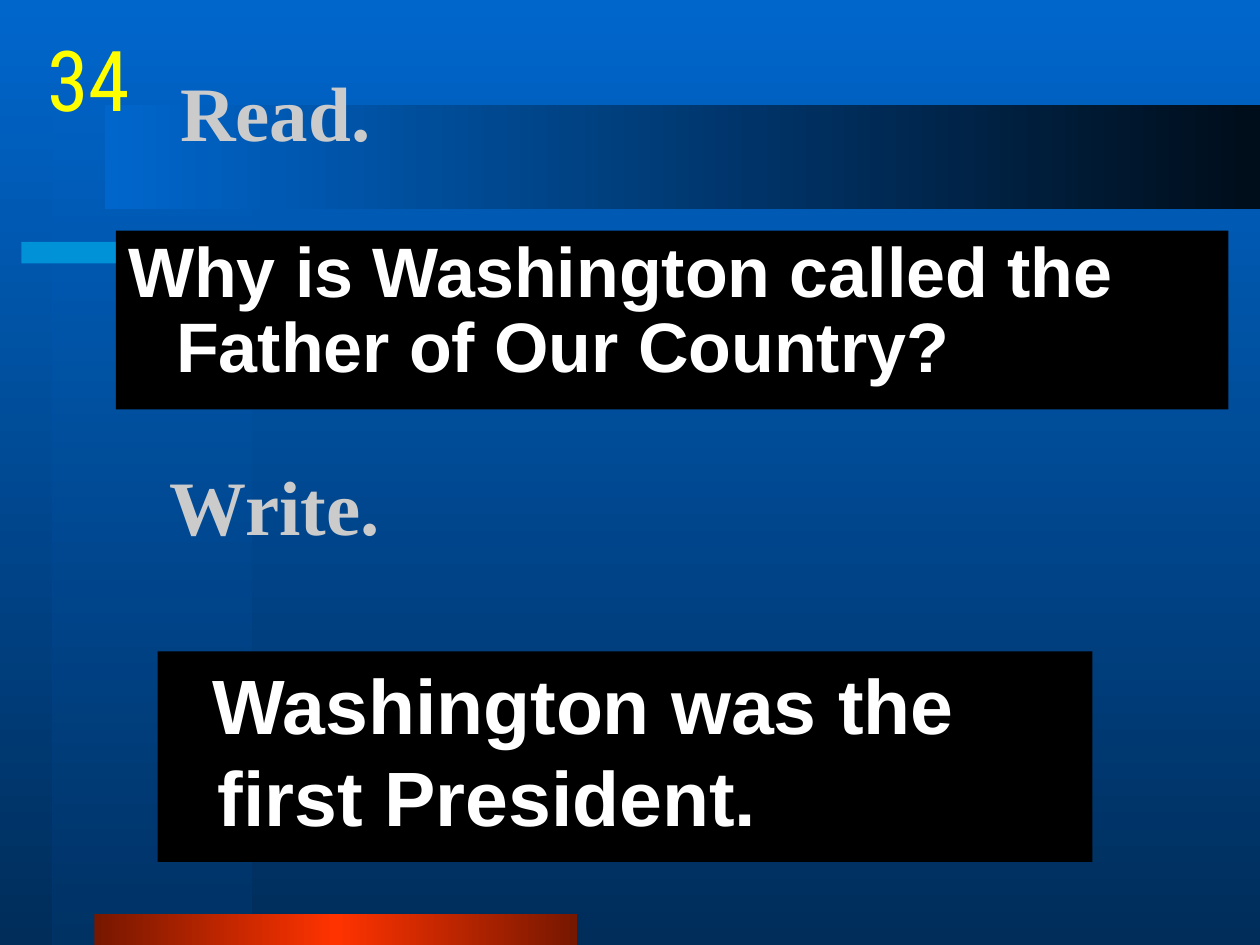
from dataclasses import dataclass
from typing import Optional

import lxml.etree
import pptx
import pptx.dml.color
import pptx.enum.shapes
import pptx.enum.text
import pptx.oxml.ns
import pptx.util

Inches = pptx.util.Inches
Pt = pptx.util.Pt
qn = pptx.oxml.ns.qn


@dataclass(frozen=True)
class Theme:
    blue: str = "0066CC"
    navy: str = "002D5A"
    column_end: str = "00376E"
    midnight: str = "000D1A"
    cyan: str = "00CCFF"
    red: str = "FF3300"
    dark_red: str = "761700"
    black: str = "000000"
    white: str = "FFFFFF"
    silver: str = "CBCBCB"
    yellow: str = "FFFF00"
    serif: str = "Times New Roman"
    sans: str = "Arial"
    condensed: str = "Roboto Condensed"
    question_size: int = 40
    heading_size: int = 44
    number_size: int = 48


THEME = Theme()


@dataclass(frozen=True)
class Box:
    left: float
    top: float
    width: float
    height: float

    def lengths(self) -> tuple:
        return tuple(Inches(v) for v in (self.left, self.top, self.width, self.height))


@dataclass(frozen=True)
class Decoration:
    box: Box
    colors: tuple
    angle: int = 0
    opacity: int = 100


@dataclass(frozen=True)
class TextStyle:
    font: str
    size: int
    color: str
    bold: bool = True


@dataclass(frozen=True)
class Panel:
    box: Box
    text: str
    size: int
    first_indent: float
    line_spacing: Optional[float] = None


def rgb(color: str) -> pptx.dml.color.RGBColor:
    return pptx.dml.color.RGBColor.from_string(color)


def apply_gradient(fill, owner, colors: tuple, angle: int) -> None:
    """Spread the colours evenly; the angle runs counter-clockwise."""
    fill.gradient()
    fill.gradient_angle = angle
    stop_list = next(owner.iter(qn("a:gsLst")))
    for stop in list(stop_list):
        stop_list.remove(stop)
    for index, color in enumerate(colors):
        position = round(100000 * index / (len(colors) - 1))
        stop = lxml.etree.SubElement(stop_list, qn("a:gs"), pos=str(position))
        lxml.etree.SubElement(stop, qn("a:srgbClr"), val=color)


def add_decoration(slide, decoration: Decoration) -> None:
    shape = slide.shapes.add_shape(
        pptx.enum.shapes.MSO_SHAPE.RECTANGLE, *decoration.box.lengths())
    shape.shadow.inherit = False
    shape.line.fill.background()
    if len(decoration.colors) > 1:
        apply_gradient(shape.fill, shape.element, decoration.colors, decoration.angle)
    else:
        shape.fill.solid()
        shape.fill.fore_color.rgb = rgb(decoration.colors[0])
    if decoration.opacity < 100:
        for color in shape.element.spPr.iter(qn("a:srgbClr")):
            lxml.etree.SubElement(color, qn("a:alpha"), val=str(decoration.opacity * 1000))


def write_text(shape, text: str, style: TextStyle, centered: bool = False,
               middle: bool = False, wrap: bool = True):
    frame = shape.text_frame
    frame.text = text
    frame.word_wrap = wrap
    frame.auto_size = pptx.enum.text.MSO_AUTO_SIZE.NONE
    anchors = pptx.enum.text.MSO_ANCHOR
    frame.vertical_anchor = anchors.MIDDLE if middle else anchors.TOP
    paragraph = frame.paragraphs[0]
    alignments = pptx.enum.text.PP_ALIGN
    paragraph.alignment = alignments.CENTER if centered else alignments.LEFT
    paragraph.font.name = style.font
    paragraph.font.size = Pt(style.size)
    paragraph.font.bold = style.bold
    paragraph.font.color.rgb = rgb(style.color)
    return paragraph


def add_panel(slide, panel: Panel) -> None:
    shape = slide.shapes.add_textbox(*panel.box.lengths())
    shape.fill.solid()
    shape.fill.fore_color.rgb = rgb(THEME.black)
    paragraph = write_text(shape, panel.text, TextStyle(THEME.sans, panel.size, THEME.white))
    paragraph.space_before = Pt(3.6)
    paragraph.line_spacing = panel.line_spacing
    properties = paragraph._p.get_or_add_pPr()
    properties.set("marL", str(Inches(0.38)))
    properties.set("indent", str(Inches(panel.first_indent)))


DECORATIONS = (
    Decoration(Box(0.42, 0, 1.58, 7.5), (THEME.blue, THEME.column_end), 270, 50),
    Decoration(Box(0.17, 1.92, 5.17, 0.17), (THEME.cyan,), opacity=50),
    Decoration(Box(0.75, 7.25, 3.83, 0.25), (THEME.dark_red, THEME.red, THEME.dark_red)),
    Decoration(Box(0.83, 0.83, 9.17, 0.83), (THEME.blue, THEME.midnight)),
)
QUESTION = Panel(Box(0.92, 1.83, 8.83, 1.42),
                 "Why is Washington called the Father of Our Country?",
                 THEME.question_size, -0.38, 0.9)
ANSWER = Panel(Box(1.25, 5.17, 7.42, 1.67), "Washington was the first President.",
               THEME.heading_size, -0.04)


def main() -> None:
    presentation = pptx.Presentation()
    presentation.slide_width, presentation.slide_height = Inches(10), Inches(7.5)
    slide = presentation.slides.add_slide(presentation.slide_layouts[5])

    # Background and decoration
    apply_gradient(slide.background.fill, slide.element, (THEME.blue, THEME.navy), 270)
    for decoration in DECORATIONS:
        add_decoration(slide, decoration)

    # Title, in front of the decoration
    heading = TextStyle(THEME.serif, THEME.heading_size, THEME.silver)
    title = slide.shapes.title
    title.left, title.top, title.width, title.height = Box(1.33, 0.25, 8.5, 1.25).lengths()
    write_text(title, "Read.", heading, middle=True)
    title.element.getparent().append(title.element)

    # Question, second heading and answer
    add_panel(slide, QUESTION)
    write_heading = slide.shapes.add_textbox(*Box(1.25, 3.17, 8.5, 1.67).lengths())
    write_text(write_heading, "Write.", heading, middle=True)
    add_panel(slide, ANSWER)

    # Slide number
    number = slide.shapes.add_textbox(*Box(0.33, 0.17, 0.75, 0.83).lengths())
    number_style = TextStyle(THEME.condensed, THEME.number_size, THEME.yellow, bold=False)
    write_text(number, "34", number_style, centered=True, wrap=False)

    presentation.save("out.pptx")


if __name__ == "__main__":
    main()
